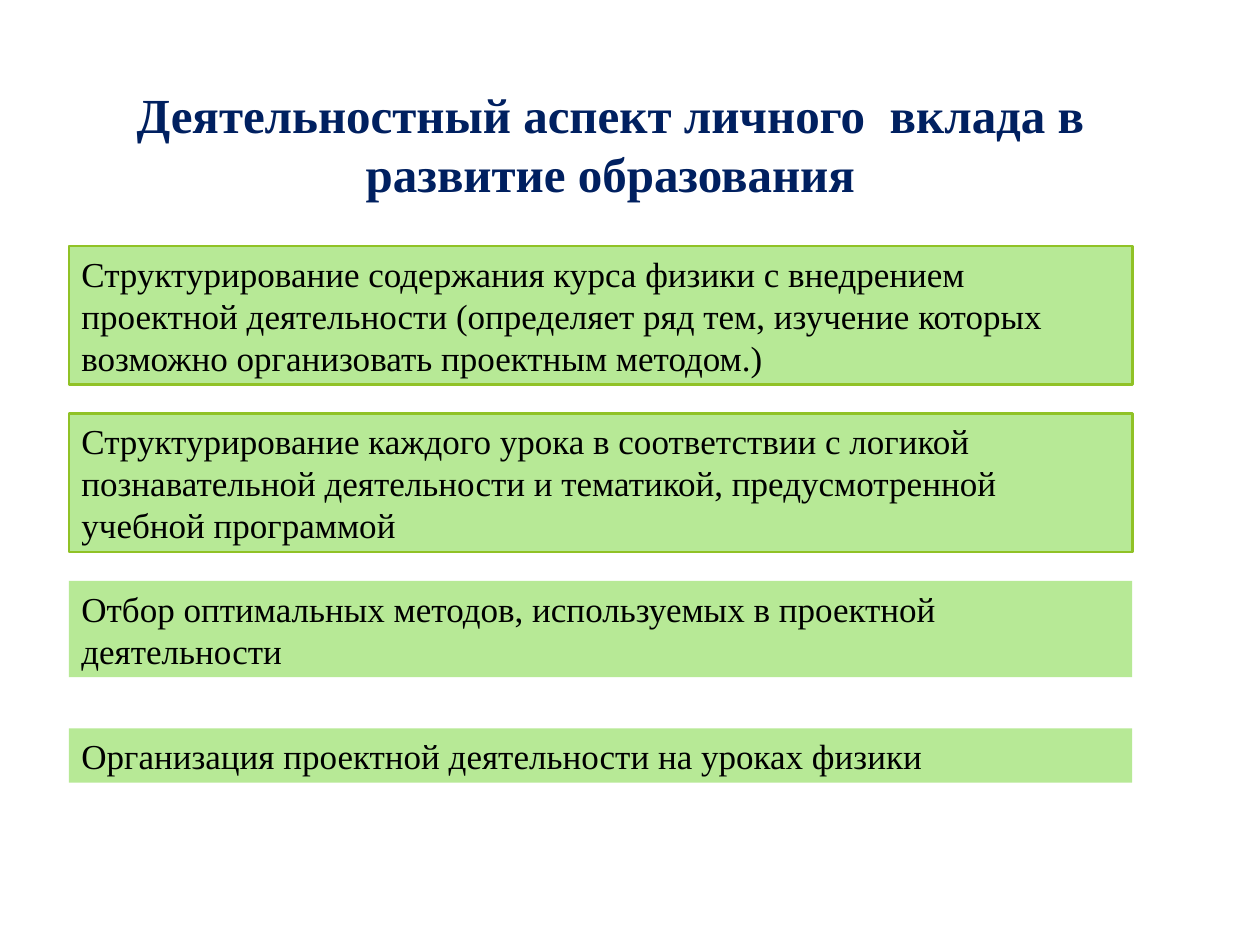
import pptx
import pptx.dml.color
import pptx.enum.shapes
import pptx.enum.text
import pptx.util

Pt = pptx.util.Pt
Align = pptx.enum.text.PP_ALIGN
FONT = "Times New Roman"


def color(hex_code):
    return pptx.dml.color.RGBColor.from_string(hex_code)


def set_text(shape, text, size, hex_code, bold, alignment):
    frame = shape.text_frame
    frame.text = text
    frame.word_wrap = True
    frame.auto_size = pptx.enum.text.MSO_AUTO_SIZE.NONE
    frame.vertical_anchor = pptx.enum.text.MSO_ANCHOR.TOP
    frame.margin_left = frame.margin_right = Pt(7.2)
    frame.margin_top = frame.margin_bottom = Pt(3.6)
    paragraph = frame.paragraphs[0]
    paragraph.alignment = alignment
    paragraph.font.name = FONT
    paragraph.font.size = Pt(size)
    paragraph.font.bold = bold
    paragraph.font.color.rgb = color(hex_code)


presentation = pptx.Presentation()
presentation.slide_width = Pt(720)
presentation.slide_height = Pt(540)
slide = presentation.slides.add_slide(presentation.slide_layouts[5])

title = slide.shapes.title
title.left, title.top, title.width, title.height = Pt(28), Pt(44.6), Pt(641.5), Pt(74.2)
set_text(title, "Деятельностный аспект личного  вклада в развитие образования",
         28, "002060", True, Align.CENTER)

# top, height, outlined, text
activities = [
    (140.6, 79.2, True,
     "Структурирование содержания курса физики с внедрением  проектной деятельности "
     "(определяет ряд тем, изучение которых возможно организовать проектным методом.)"),
    (236.2, 79.2, True,
     "Структурирование каждого урока в соответствии с логикой познавательной "
     "деятельности и тематикой, предусмотренной учебной программой"),
    (332, 55, False,
     "Отбор оптимальных методов, используемых в проектной деятельности"),
    (416.2, 31, False,
     "Организация проектной деятельности на уроках физики"),
]
for top, height, outlined, text in activities:
    activity = slide.shapes.add_shape(
        pptx.enum.shapes.MSO_SHAPE.RECTANGLE, Pt(39.4), Pt(top), Pt(607.6), Pt(height))
    activity.shadow.inherit = False
    activity.fill.solid()
    activity.fill.fore_color.rgb = color("B7E996")
    if outlined:
        activity.line.color.rgb = color("90C226")
        activity.line.width = Pt(1.5)
    else:
        activity.line.fill.background()
    set_text(activity, text, 20, "000000", False, Align.LEFT)

presentation.save("out.pptx")
